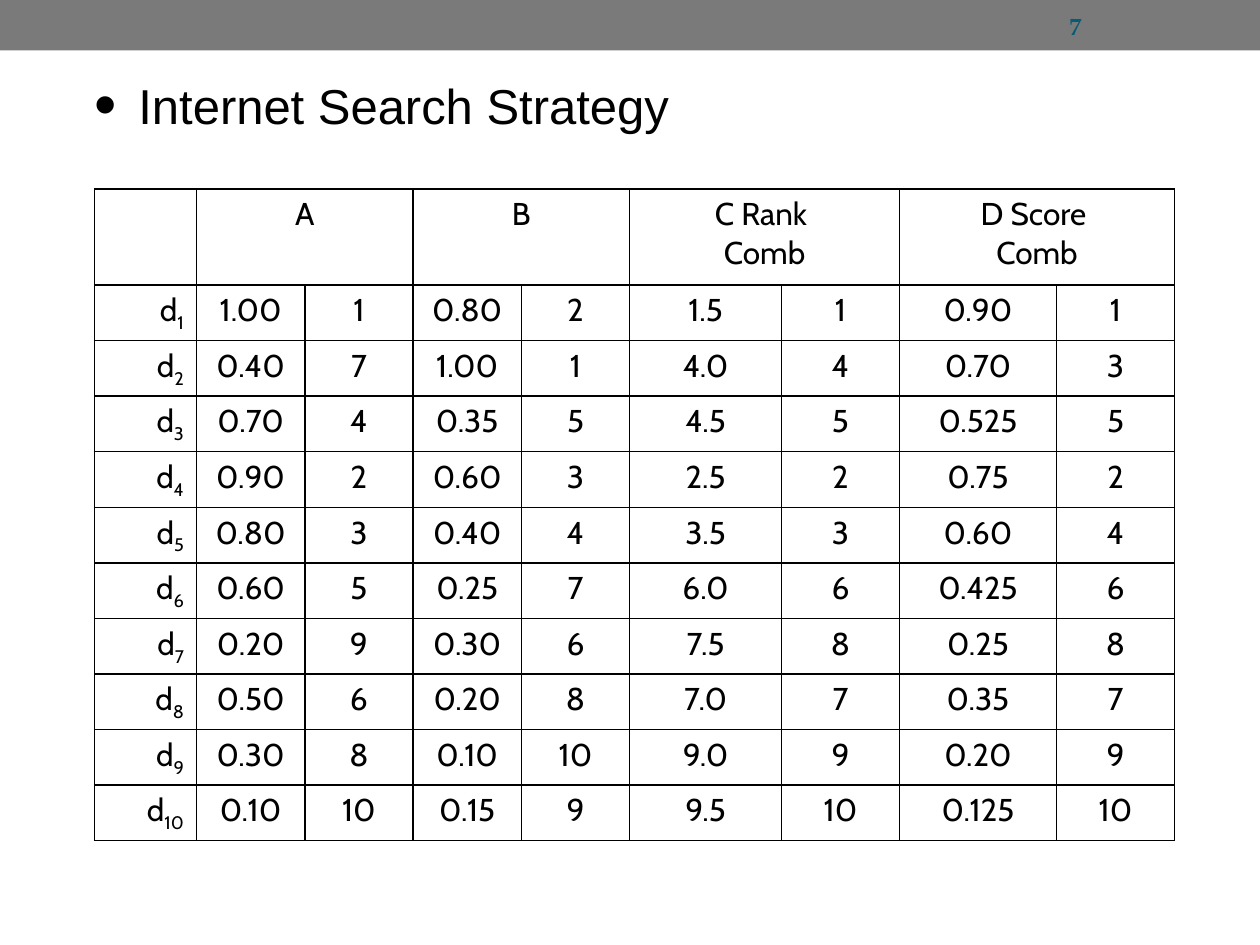
from dataclasses import dataclass

from lxml.etree import SubElement
from pptx import Presentation
from pptx.dml.color import RGBColor as Rgb
from pptx.enum.shapes import MSO_SHAPE as Shape
from pptx.enum.text import MSO_ANCHOR as Anchor, MSO_AUTO_SIZE as AutoSize, PP_ALIGN as Align
from pptx.oxml.ns import qn
from pptx.util import Pt


@dataclass(frozen=True)
class Theme:
    ink: str = "000000"
    bar: str = "7A7A7A"
    number: str = "045C75"
    title_font: str = "Arial"
    table_font: str = "Cabin"
    number_font: str = "TeX Gyre Pagella"
    title_size: float = 28
    table_size: float = 18
    number_size: float = 14
    border: float = 1


@dataclass(frozen=True)
class Area:
    left: float
    top: float
    width: float
    height: float

    def lengths(self) -> tuple:
        return Pt(self.left), Pt(self.top), Pt(self.width), Pt(self.height)


@dataclass(frozen=True)
class Document:
    a: tuple[str, str]
    b: tuple[str, str]
    rank_comb: tuple[str, str]
    score_comb: tuple[str, str]

    def values(self) -> tuple[str, ...]:
        return self.a + self.b + self.rank_comb + self.score_comb


THEME = Theme()
GROUPS = ("A", "B", "C Rank \nComb", "D Score \nComb")
DOCUMENTS = (
    Document(("1.00", "1"), ("0.80", "2"), ("1.5", "1"), ("0.90", "1")),
    Document(("0.40", "7"), ("1.00", "1"), ("4.0", "4"), ("0.70", "3")),
    Document(("0.70", "4"), ("0.35", "5"), ("4.5", "5"), ("0.525", "5")),
    Document(("0.90", "2"), ("0.60", "3"), ("2.5", "2"), ("0.75", "2")),
    Document(("0.80", "3"), ("0.40", "4"), ("3.5", "3"), ("0.60", "4")),
    Document(("0.60", "5"), ("0.25", "7"), ("6.0", "6"), ("0.425", "6")),
    Document(("0.20", "9"), ("0.30", "6"), ("7.5", "8"), ("0.25", "8")),
    Document(("0.50", "6"), ("0.20", "8"), ("7.0", "7"), ("0.35", "7")),
    Document(("0.30", "8"), ("0.10", "10"), ("9.0", "9"), ("0.20", "9")),
    Document(("0.10", "10"), ("0.15", "9"), ("9.5", "10"), ("0.125", "10")),
)
COLUMN_WIDTHS = (58.3, 61.9, 61.9, 61.9, 61.9, 86.8, 67.4, 89.8, 67.4)
HEADER_HEIGHT, ROW_HEIGHT = 54.9, 31.74
TABLE_LEFT, TABLE_TOP = 54, 108


def style_font(para, name: str, size: float, color: str, bold: bool = False) -> None:
    font = para.font
    font.name, font.size, font.bold = name, Pt(size), bold
    font.color.rgb = Rgb.from_string(color)


def add_bar(page, area: Area) -> None:
    bar = page.shapes.add_shape(Shape.RECTANGLE, *area.lengths())
    bar.shadow.inherit = False
    bar.fill.solid()
    bar.fill.fore_color.rgb = Rgb.from_string(THEME.bar)
    bar.line.fill.background()


def add_text(page, area: Area, text: str, left_margin: float, top_margin: float):
    """Add a one-paragraph box and return its text frame."""
    frame = page.shapes.add_textbox(*area.lengths()).text_frame
    frame.word_wrap = True
    frame.auto_size = AutoSize.SHAPE_TO_FIT_TEXT
    frame.margin_left = Pt(left_margin)
    frame.margin_top = frame.margin_bottom = Pt(top_margin)
    frame.text = text
    return frame


def add_bullet(para, indent: float, hanging: float) -> None:
    props = para._p.get_or_add_pPr()
    props.set("marL", str(Pt(indent)))
    props.set("indent", str(-Pt(hanging)))
    color = SubElement(props, qn("a:buClr"))
    SubElement(color, qn("a:srgbClr"), val=THEME.ink)
    SubElement(props, qn("a:buSzPct"), val="130000")
    SubElement(props, qn("a:buFont"), typeface=THEME.title_font)
    SubElement(props, qn("a:buChar"), char="•")


def style_cell(cell) -> None:
    """Give a cell four border lines and no fill."""
    props = cell._tc.get_or_add_tcPr()
    for side in ("lnL", "lnR", "lnT", "lnB"):
        line = SubElement(props, qn(f"a:{side}"), w=str(Pt(THEME.border)))
        fill = SubElement(line, qn("a:solidFill"))
        SubElement(fill, qn("a:srgbClr"), val=THEME.ink)
    cell.fill.background()


def write_cell(cell, text: str, align: Align = Align.CENTER, subscript: str = "") -> None:
    cell.text = text
    if subscript:
        span = cell.text_frame.paragraphs[0].add_run()
        span.text = subscript
        span.font._element.set("baseline", "-25000")
    for para in cell.text_frame.paragraphs:
        para.alignment = align
        style_font(para, THEME.table_font, THEME.table_size, THEME.ink)


def add_score_table(page) -> None:
    heights = [HEADER_HEIGHT] + [ROW_HEIGHT] * len(DOCUMENTS)
    area = Area(TABLE_LEFT, TABLE_TOP, sum(COLUMN_WIDTHS), sum(heights))
    table = page.shapes.add_table(len(heights), len(COLUMN_WIDTHS), *area.lengths()).table
    table.first_row = table.horz_banding = False
    for column, width in zip(table.columns, COLUMN_WIDTHS):
        column.width = Pt(width)
    for row, height in zip(table.rows, heights):
        row.height = Pt(height)
    for cell in table.iter_cells():
        style_cell(cell)

    for index, group in enumerate(GROUPS):
        first = 1 + 2 * index
        table.cell(0, first).merge(table.cell(0, first + 1))
        write_cell(table.cell(0, first), group)
    for row, document in enumerate(DOCUMENTS, start=1):
        write_cell(table.cell(row, 0), "d", Align.RIGHT, str(row))
        for column, value in enumerate(document.values(), start=1):
            write_cell(table.cell(row, column), value)


def main() -> None:
    deck = Presentation()
    deck.slide_width, deck.slide_height = Pt(720), Pt(540)
    page = deck.slides.add_slide(deck.slide_layouts[6])

    add_bar(page, Area(0, 0, 720, 28.8))
    add_score_table(page)

    title = add_text(page, Area(36, 36, 384, 48), "Internet Search Strategy", 7.2, 7.2)
    add_bullet(title.paragraphs[0], 36, 25.2)
    style_font(title.paragraphs[0], THEME.title_font, THEME.title_size, THEME.ink)

    number = add_text(page, Area(600, 2.2, 84, 24.5), "7", 11, 3.6)
    number.vertical_anchor = Anchor.MIDDLE
    style_font(number.paragraphs[0], THEME.number_font, THEME.number_size, THEME.number, True)

    deck.save("out.pptx")


if __name__ == "__main__":
    main()
